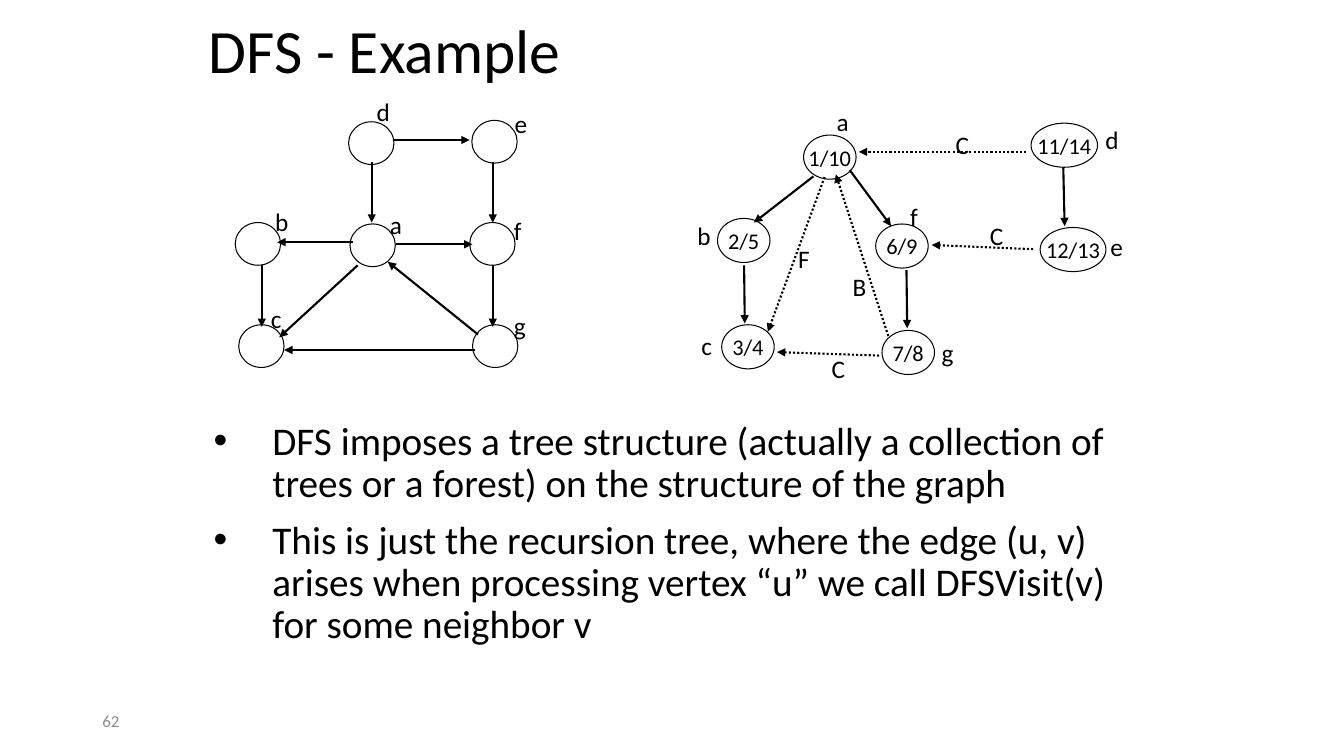
from lxml import etree
from pptx import Presentation
from pptx.dml.color import RGBColor
from pptx.enum.dml import MSO_LINE
from pptx.enum.shapes import MSO_CONNECTOR, MSO_SHAPE
from pptx.enum.text import MSO_ANCHOR, PP_ALIGN
from pptx.oxml.ns import qn
from pptx.util import Pt

OVAL, STRAIGHT = MSO_SHAPE.OVAL, MSO_CONNECTOR.STRAIGHT
MIDDLE, TOP, CENTER = MSO_ANCHOR.MIDDLE, MSO_ANCHOR.TOP, PP_ALIGN.CENTER
DOTTED = MSO_LINE.ROUND_DOT

FONT = "Calibri"
COLORS = {"ink": "000000", "page number": "8C8C8C"}

TITLE = "DFS - Example"
PAGE_NUMBER = "62"
BULLETS = [
    "DFS imposes a tree structure (actually a collection of trees or a forest) "
    "on the structure of the graph",
    "This is just the recursion tree, where the edge (u, v) arises when "
    "processing vertex “u” we call DFSVisit(v) for some neighbor v",
]

# Vertices: name, discovery/finish times, (left, top, width), name's (left, top)
GRAPH_VERTICES = [
    ("d", "", (249, 87, 32.4), (262, 65.5)),
    ("e", "", (337, 86, 32.4), (360.5, 73.5)),
    ("f", "", (335.5, 159, 32.4), (360, 150.5)),
    ("a", "", (250, 160, 32.4), (271.5, 146)),
    ("b", "", (168, 159, 32.4), (189.5, 144)),
    ("c", "", (170.5, 232, 32.4), (186.5, 213)),
    ("g", "", (337.5, 232, 32.4), (360, 218)),
]
FOREST_VERTICES = [
    ("a", "1/10", (574, 96.5, 37.5), (590.5, 72.5)),
    ("b", "2/5", (512.5, 156, 37.5), (491, 153.5)),
    ("f", "6/9", (625.5, 160, 37.5), (643, 140.5)),
    ("e", "12/13", (743, 162.5, 47), (786, 161.5)),
    ("d", "11/14", (736.5, 88, 47.5), (782.5, 85.5)),
    ("c", "3/4", (515.5, 232, 37.5), (494, 232.5)),
    ("g", "7/8", (630, 236, 37.5), (665.5, 237.5)),
]

# Edges: start, arrowhead end
GRAPH_EDGES = [
    ((339, 250), (203, 250)),      # g to c
    ((352, 189.5), (352, 233.5)),  # f to g
    ((352, 116), (352, 159)),      # e to f
    ((283, 174.5), (337.5, 174.5)),  # a to f
    ((281, 100), (335.5, 100)),    # d to e
    ((265.5, 116), (265.5, 159)),  # d to a
    ((252.5, 173), (198, 173)),    # a to b
    ((187, 189.5), (187, 233.5)),  # b to c
    ((255.5, 189.5), (199.5, 241)),  # a to c
    ((341.5, 239), (277, 187)),    # g to a
]
TREE_EDGES = [
    ((581, 126), (538.5, 159)),      # a to b
    ((531.5, 189.5), (532, 231)),    # b to c
    ((607, 121.5), (636.5, 161.5)),  # a to f
    ((647.5, 193), (648, 234.5)),    # f to g
    ((759.5, 119.5), (760.5, 161.5)),  # d to e
]
# Non-tree edges: kind, start, arrowhead end, kind's (left, top)
OTHER_EDGES = [
    ("B", (634.5, 240), (597, 124.5), (602, 190)),
    ("C", (628, 254), (555, 251.5), (587, 248.5)),
    ("F", (589, 126.5), (548.5, 237), (563, 170.5)),
    ("C", (738, 178), (665.5, 175), (700, 154)),
    ("C", (733, 108.5), (613.5, 108.5), (675.5, 88.5)),
]

prs = Presentation()
prs.slide_width, prs.slide_height = Pt(960), Pt(540)
slide = prs.slides.add_slide(prs.slide_layouts[6])
shapes = slide.shapes


def color(name):
    return RGBColor.from_string(COLORS[name])


def style(paragraph, size, ink="ink"):
    paragraph.font.name = FONT
    paragraph.font.size = Pt(size)
    paragraph.font.color.rgb = color(ink)


def add_text(lines, left, top, width, height, size, anchor=TOP, ink="ink"):
    frame = shapes.add_textbox(Pt(left), Pt(top), Pt(width), Pt(height)).text_frame
    frame.word_wrap = True
    frame.vertical_anchor = anchor
    frame.text = "\n".join(lines)
    for paragraph in frame.paragraphs:
        style(paragraph, size, ink)
    return frame.paragraphs


def add_label(letter, position):
    add_text([letter], *position, 24.5, 29, 18)


def add_vertex(name, times, oval, label, height):
    left, top, width = oval
    vertex = shapes.add_shape(OVAL, Pt(left), Pt(top), Pt(width), Pt(height))
    vertex.shadow.inherit = False
    vertex.fill.background()
    vertex.line.color.rgb = color("ink")
    vertex.line.width = Pt(0.75)
    if times:
        frame = vertex.text_frame
        frame.word_wrap = False
        frame.vertical_anchor = MIDDLE
        frame.text = times
        frame.paragraphs[0].alignment = CENTER
        style(frame.paragraphs[0], 16)
    add_label(name, label)


def add_edge(start, end, dash=None):
    edge = shapes.add_connector(STRAIGHT, *map(Pt, start + end))
    edge.line.color.rgb = color("ink")
    edge.line.width = Pt(1.5)
    if dash:
        edge.line.dash_style = dash
    etree.SubElement(edge.line._get_or_add_ln(), qn("a:tailEnd"), type="triangle")
    etree.SubElement(edge._element.spPr, qn("a:effectLst"))


# Title and page number
add_text([PAGE_NUMBER], 66, 500.5, 216, 29, 12, MIDDLE, "page number")
title, = add_text([TITLE], 142, 11, 687, 54.5, 44, MIDDLE)
title.line_spacing = 0.9

# Graph on the left, search forest on the right
for vertices, oval_height in ((GRAPH_VERTICES, 30.5), (FOREST_VERTICES, 31.5)):
    for vertex_facts in vertices:
        add_vertex(*vertex_facts, oval_height)
for start, end in GRAPH_EDGES + TREE_EDGES:
    add_edge(start, end)
for kind, start, end, kind_position in OTHER_EDGES:
    add_edge(start, end, DOTTED)
    add_label(kind, kind_position)

# Bullets
for bullet in add_text(BULLETS, 145.5, 297.5, 677.5, 224.5, 28):
    bullet.line_spacing = 0.9
    bullet.space_before = Pt(10)
    properties = bullet._p.get_or_add_pPr()
    properties.set("marL", str(Pt(42)))
    properties.set("indent", str(-Pt(42)))
    mark_font = etree.Element(qn("a:buFont"), typeface="Arial")
    mark = etree.Element(qn("a:buChar"), char="•")
    spacing_after = properties.find(qn("a:spcBef"))
    spacing_after.addnext(mark_font)
    mark_font.addnext(mark)

prs.save("out.pptx")
